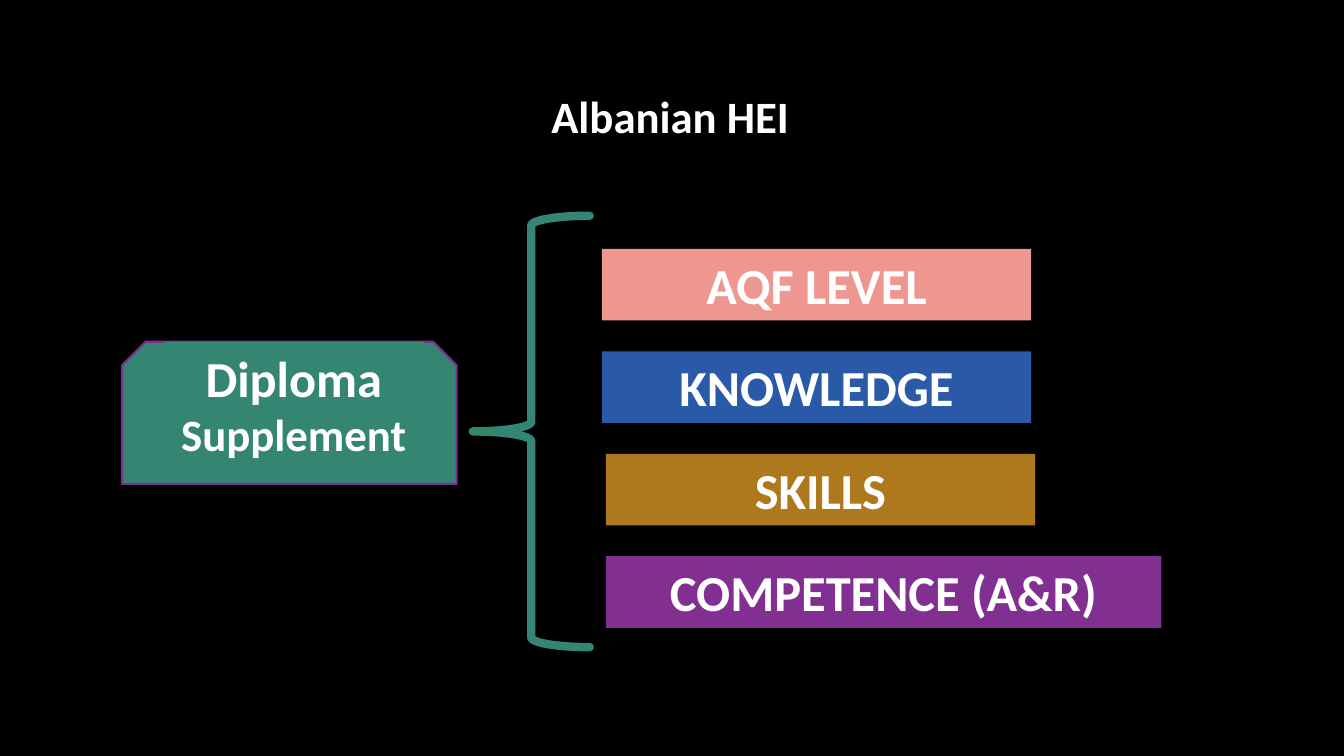
"""Build the Albanian HEI diploma supplement slide."""
import pptx
import pptx.util
import pptx.dml.color
import pptx.enum.shapes
import pptx.enum.text

WIDTH, HEIGHT = 13.33, 7.5
SHAPE = pptx.enum.shapes.MSO_SHAPE
WHITE, BLACK, GREEN, PURPLE = "FFFFFF", "000000", "348672", "7F2E8F"
FONT = {"name": "Calibri", "bold": True}
FRAME = {
    "word_wrap": True,
    "auto_size": pptx.enum.text.MSO_AUTO_SIZE.SHAPE_TO_FIT_TEXT,
    "vertical_anchor": pptx.enum.text.MSO_ANCHOR.TOP,
    "margin_left": pptx.util.Inches(0.1),
    "margin_right": pptx.util.Inches(0.1),
    "margin_top": pptx.util.Inches(0.05),
    "margin_bottom": pptx.util.Inches(0.05),
}
BAR_TOP, BAR_STEP, BAR_HEIGHT = 32.93, 13.55, 9.47
BARS = [
    ("AQF LEVEL", "EE9791", 44.78, 31.95),
    ("KNOWLEDGE", "2A59A8", 44.78, 31.95),
    ("SKILLS", "AE781D", 45.08, 31.95),
    ("COMPETENCE (A&R)", "812F91", 45.08, 41.33),
]


def colour(target, value):
    """Set a fill or font colour from a hex string."""
    if hasattr(target, "solid"):
        target.solid()
        target = target.fore_color
    else:
        target = target.color
    target.rgb = pptx.dml.color.RGBColor.from_string(value)


def area(left, top, width, height):
    """Turn percentages of the slide into a position and size."""
    shares = ((left, WIDTH), (top, HEIGHT), (width, WIDTH), (height, HEIGHT))
    return [pptx.util.Inches(share * full / 100) for share, full in shares]


def write(shape, lines):
    """Write centred bold white lines, each given as text and point size."""
    frame = shape.text_frame
    for name, value in FRAME.items():
        setattr(frame, name, value)
    for index, (text, size) in enumerate(lines):
        para = frame.add_paragraph() if index else frame.paragraphs[0]
        para.alignment = pptx.enum.text.PP_ALIGN.CENTER
        span = para.add_run()
        span.text = text
        for name, value in FONT.items():
            setattr(span.font, name, value)
        span.font.size = pptx.util.Pt(size)
        colour(span.font, WHITE)


def add_shape(shapes, preset, place, fill=None, line=None, weight=0):
    """Add a flat preset shape with an optional fill and outline."""
    shape = shapes.add_shape(preset, *area(*place))
    shape.shadow.inherit = False
    if fill:
        colour(shape.fill, fill)
    else:
        shape.fill.background()
    if line:
        colour(shape.line.fill, line)
        shape.line.width = pptx.util.Pt(weight)
    else:
        shape.line.fill.background()
    return shape


def add_title(page, text):
    """Place and format the title placeholder."""
    title = page.shapes.title
    names = ("left", "top", "width", "height")
    for name, value in zip(names, area(33.53, 11.07, 32.7, 8.53)):
        setattr(title, name, value)
    write(title, [(text, 32)])


def add_diploma(page):
    """Add the snipped diploma card with its label as a group."""
    card = page.shapes.add_group_shape().shapes
    add_shape(card, SHAPE.SNIP_2_SAME_RECTANGLE, (9.08, 45.2, 24.9, 18.8),
              GREEN, PURPLE, 1.5)
    label = add_shape(card, SHAPE.RECTANGLE, (12.15, 45.2, 19.43, 16.67), GREEN)
    write(label, [("Diploma", 36), ("Supplement", 32)])


def add_brace(page):
    """Add the round-ended brace that opens towards the bars."""
    brace = add_shape(page.shapes, SHAPE.RIGHT_BRACE, (35.18, 28.53, 8.7, 57.07),
                      line=GREEN, weight=6)
    brace.rotation = 180
    brace.line._get_or_add_ln().set("cap", "rnd")


def add_bars(page):
    """Stack the coloured bars at an equal step."""
    for row, (text, fill, left, width) in enumerate(BARS):
        place = (left, BAR_TOP + row * BAR_STEP, width, BAR_HEIGHT)
        write(add_shape(page.shapes, SHAPE.RECTANGLE, place, fill), [(text, 36)])


def main():
    """Build and save the deck."""
    deck = pptx.Presentation()
    deck.slide_width = pptx.util.Inches(WIDTH)
    deck.slide_height = pptx.util.Inches(HEIGHT)
    page = deck.slides.add_slide(deck.slide_layouts.get_by_name("Title Only"))
    colour(page.background.fill, BLACK)
    add_title(page, "Albanian HEI")
    add_diploma(page)
    add_brace(page)
    add_bars(page)
    deck.save("out.pptx")


if __name__ == "__main__":
    main()
